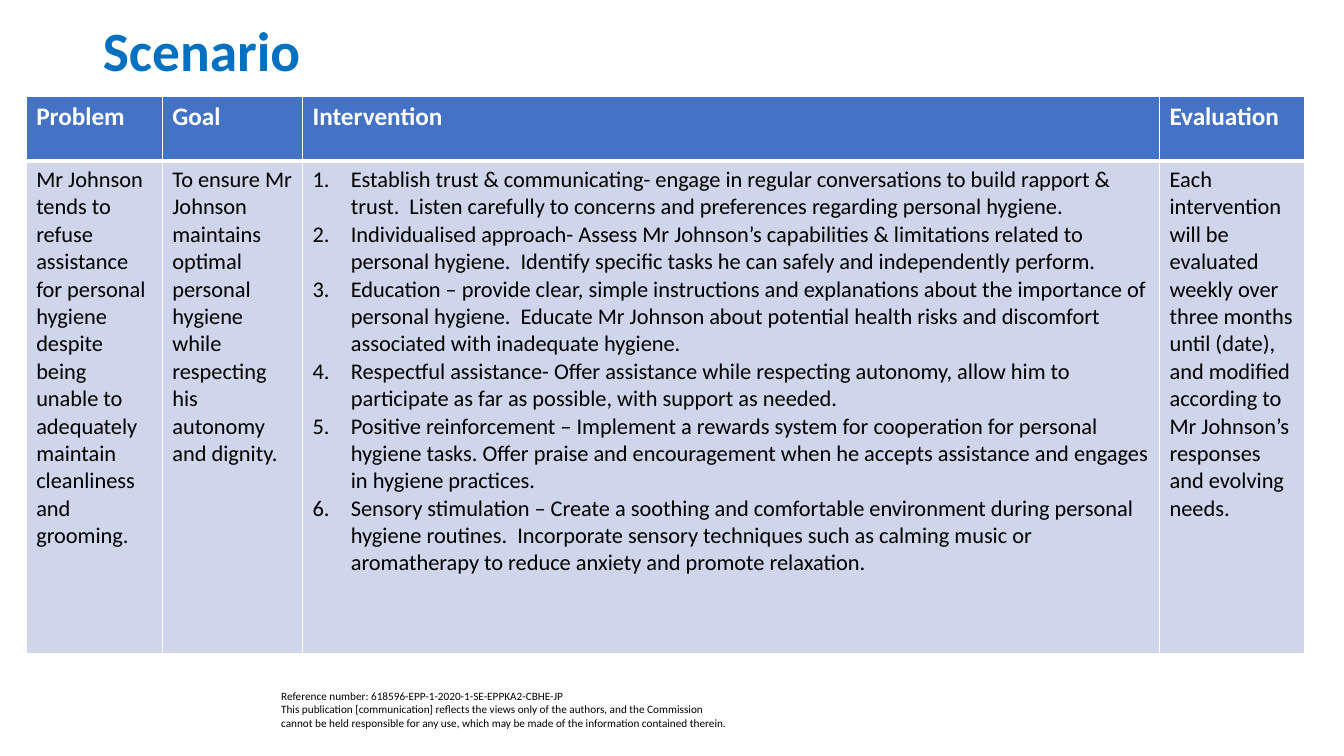
from dataclasses import dataclass

from lxml.etree import SubElement
from pptx import Presentation
from pptx.dml.color import RGBColor
from pptx.enum.text import MSO_ANCHOR as Anchor
from pptx.oxml.ns import qn
from pptx.util import Emu, Inches, Pt

WIDTH, HEIGHT = Inches(13.33), Inches(7.5)
WHITE, BLACK = "FFFFFF", "000000"
TITLE_BLUE, HEADER_BLUE, BODY_BLUE = "0070C0", "4472C4", "CFD5EA"
NUMBER_INDENT = Inches(0.38)
HEADER_ROW, BODY_ROW = 8.53, 65.2


@dataclass
class Area:
    """A rectangle in percent of the slide's width and height."""
    left: float
    top: float
    width: float
    height: float

    def box(self) -> tuple[Emu, Emu, Emu, Emu]:
        """Return left, top, width and height as lengths."""
        return across(self.left), down(self.top), across(self.width), down(self.height)


@dataclass
class PlanColumn:
    """One column of the care plan, its width in percent of the slide."""
    heading: str
    width: float
    entries: list[str]
    numbered: bool = False


PLAN = [
    PlanColumn("Problem", 10.13, [
        "Mr Johnson tends to refuse assistance for personal hygiene despite being unable to "
        "adequately maintain cleanliness and grooming."]),
    PlanColumn("Goal", 10.43, [
        "To ensure Mr Johnson maintains optimal personal hygiene while respecting his autonomy "
        "and dignity."]),
    PlanColumn("Intervention", 63.77, [
        "Establish trust & communicating- engage in regular conversations to build rapport & "
        "trust.  Listen carefully to concerns and preferences regarding personal hygiene.",
        "Individualised approach- Assess Mr Johnson’s capabilities & limitations related to "
        "personal hygiene.  Identify specific tasks he can safely and independently perform.",
        "Education – provide clear, simple instructions and explanations about the importance of "
        "personal hygiene.  Educate Mr Johnson about potential health risks and discomfort "
        "associated with inadequate hygiene.",
        "Respectful assistance- Offer assistance while respecting autonomy, allow him to "
        "participate as far as possible, with support as needed.",
        "Positive reinforcement – Implement a rewards system for cooperation for personal "
        "hygiene tasks. Offer praise and encouragement when he accepts assistance and engages "
        "in hygiene practices.",
        "Sensory stimulation – Create a soothing and comfortable environment during personal "
        "hygiene routines.  Incorporate sensory techniques such as calming music or "
        "aromatherapy to reduce anxiety and promote relaxation."], numbered=True),
    PlanColumn("Evaluation", 10.8, [
        "Each intervention will be evaluated weekly over three months until (date), and modified "
        "according to Mr Johnson’s responses and evolving needs."]),
]
REFERENCE = (
    "Reference number: 618596-EPP-1-2020-1-SE-EPPKA2-CBHE-JP\n"
    "This publication [communication] reflects the views only of the authors, and the Commission "
    "cannot be held responsible for any use, which may be made of the information contained "
    "therein.")

TITLE_AREA = Area(6.9, 3.47, 86.27, 7.33)
PLAN_AREA = Area(1.95, 12.8, sum(column.width for column in PLAN), HEADER_ROW + BODY_ROW)
REFERENCE_AREA = Area(20.18, 90.53, 34.81, 6.67)


def across(percent: float) -> Emu:
    """Return a share of the slide's width."""
    return Emu(round(WIDTH * percent / 100))


def down(percent: float) -> Emu:
    """Return a share of the slide's height."""
    return Emu(round(HEIGHT * percent / 100))


def paint(target, color: str) -> None:
    """Give a fill or font a solid colour from a hex string."""
    if hasattr(target, "solid"):
        target.solid()
        target.fore_color.rgb = RGBColor.from_string(color)
    else:
        target.color.rgb = RGBColor.from_string(color)


def write(frame, entries: list[str], *, size: float, color: str = BLACK, bold: bool = False,
          numbered: bool = False, spacing: float = 1.0) -> None:
    """Fill a text frame with formatted paragraphs."""
    frame.word_wrap = True
    for index, entry in enumerate(entries):
        paragraph = frame.add_paragraph() if index else frame.paragraphs[0]
        paragraph.text = entry
        paragraph.line_spacing = spacing
        if numbered:
            properties = paragraph._p.get_or_add_pPr()
            properties.set("marL", str(NUMBER_INDENT))
            properties.set("indent", str(-NUMBER_INDENT))
            SubElement(properties, qn("a:buFont"), typeface="+mj-lt")
            SubElement(properties, qn("a:buAutoNum"), type="arabicPeriod")
        for run in paragraph.runs:
            run.font.name, run.font.size, run.font.bold = "Calibri", Pt(size), bold
            paint(run.font, color)


def dress_cell(cell, fill: str, bottom: float, top: float) -> None:
    """Give a table cell white borders and a fill."""
    properties = cell._tc.get_or_add_tcPr()
    for side, points in {"L": 1, "R": 1, "T": top, "B": bottom}.items():
        border = SubElement(properties, qn(f"a:ln{side}"), w=str(Pt(points)))
        SubElement(SubElement(border, qn("a:solidFill")), qn("a:srgbClr"), val=WHITE)
    paint(cell.fill, fill)


def add_plan(slide) -> None:
    """Draw the care plan table."""
    plan = slide.shapes.add_table(2, len(PLAN), *PLAN_AREA.box()).table
    plan.rows[0].height, plan.rows[1].height = down(HEADER_ROW), down(BODY_ROW)
    for index, column in enumerate(PLAN):
        plan.columns[index].width = across(column.width)
        heading, content = plan.cell(0, index), plan.cell(1, index)
        dress_cell(heading, HEADER_BLUE, bottom=3, top=1)
        dress_cell(content, BODY_BLUE, bottom=1, top=3)
        write(heading.text_frame, [column.heading], size=18, color=WHITE, bold=True)
        write(content.text_frame, column.entries, size=16, numbered=column.numbered)


def main() -> None:
    """Build and save the slide."""
    deck = Presentation()
    deck.slide_width, deck.slide_height = WIDTH, HEIGHT
    slide = deck.slides.add_slide(deck.slide_layouts[5])
    title = slide.shapes.title
    title.left, title.top, title.width, title.height = TITLE_AREA.box()
    write(title.text_frame, ["Scenario"], size=39.6, color=TITLE_BLUE, bold=True, spacing=0.9)
    title.text_frame.vertical_anchor = Anchor.MIDDLE
    title.text_frame.paragraphs[0].alignment = 1
    add_plan(slide)
    reference = slide.shapes.add_textbox(*REFERENCE_AREA.box())
    write(reference.text_frame, [REFERENCE], size=8)
    deck.save("out.pptx")


if __name__ == "__main__":
    main()
